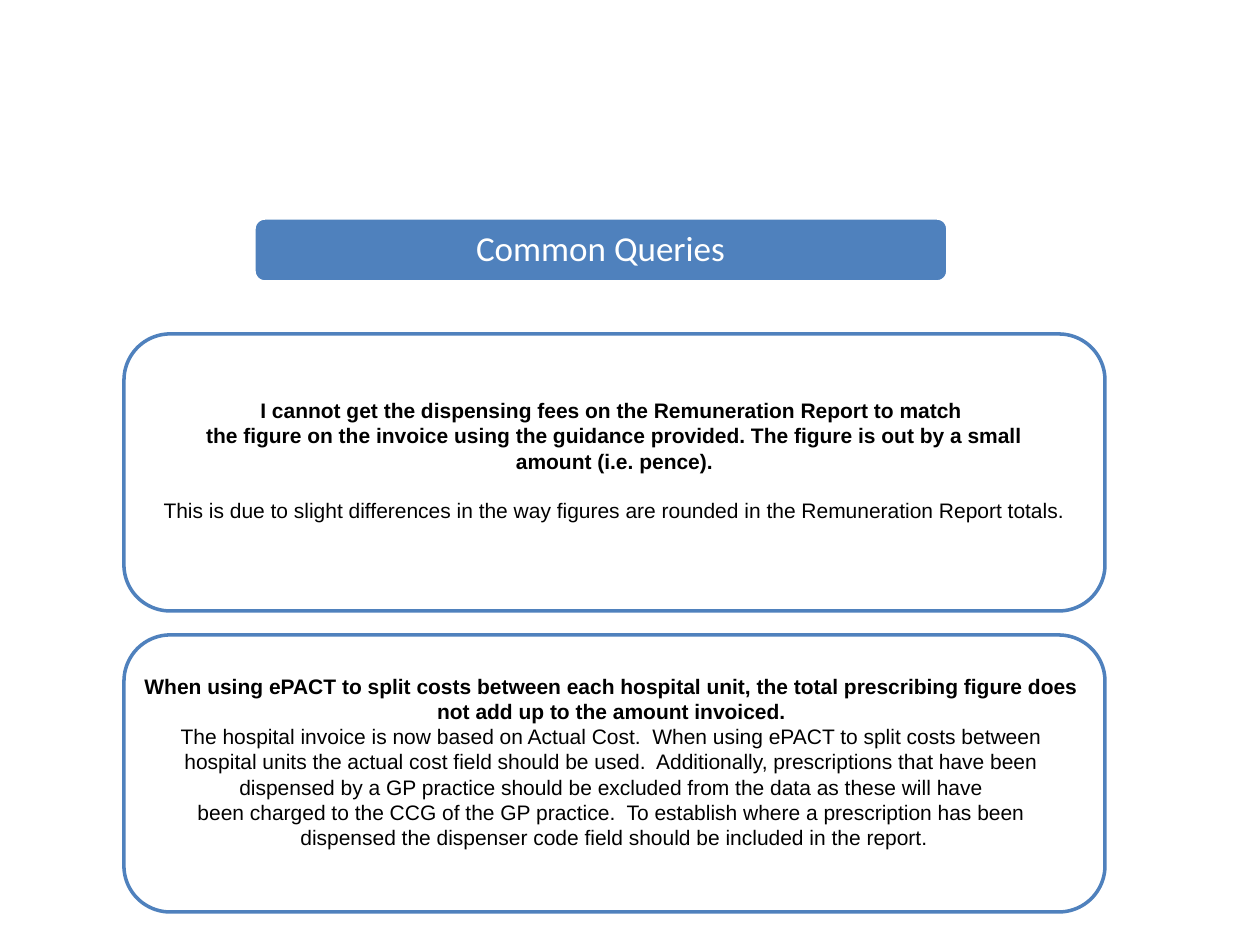
"""Build the Common Queries slide: a title bar above two question-and-answer boxes."""
from pptx import Presentation
from pptx.dml.color import RGBColor
from pptx.enum.shapes import MSO_SHAPE
from pptx.enum.text import MSO_ANCHOR, PP_ALIGN
from pptx.util import Emu, Pt

ROUNDED = MSO_SHAPE.ROUNDED_RECTANGLE
PROCESS = MSO_SHAPE.FLOWCHART_ALTERNATE_PROCESS
MIDDLE = MSO_ANCHOR.MIDDLE
CENTER = PP_ALIGN.CENTER
BLUE = RGBColor(0x4F, 0x81, 0xBD)
WHITE = RGBColor(0xFF, 0xFF, 0xFF)
BLACK = RGBColor(0x00, 0x00, 0x00)

QUERIES = [
    {
        "question": [
            "I cannot get the dispensing fees on the Remuneration Report to match ",
            "the figure on the invoice using the guidance provided. The figure is out by a small",
            "amount (i.e. pence).",
        ],
        "answer": [
            "This is due to slight differences in the way figures are rounded in the Remuneration Report totals.",
        ],
        "gap": 14,
    },
    {
        "question": [
            "When using ePACT to split costs between each hospital unit, the total prescribing figure does ",
            "not add up to the amount invoiced. ",
        ],
        "answer": [
            "The hospital invoice is now based on Actual Cost.  When using ePACT to split costs between ",
            "hospital units the actual cost field should be used.  Additionally, prescriptions that have been ",
            "dispensed by a GP practice should be excluded from the data as these will have ",
            "been charged to the CCG of the GP practice.  To establish where a prescription has been ",
            "dispensed the dispenser code field should be included in the report.",
        ],
        "gap": 0,
    },
]
BOX_TOP, BOX_STEP = 334, 301


def px(length):
    return Emu(round(length * 914400 / 126))


def add_panel(kind, left, top, width, height, fill, line):
    panel = slide.shapes.add_shape(kind, px(left), px(top), px(width), px(height))
    panel.shadow.inherit = False
    panel.fill.solid()
    panel.fill.fore_color.rgb = fill
    panel.line.color.rgb = line
    panel.line.width = Pt(2)
    return panel


prs = Presentation()
prs.slide_width, prs.slide_height = px(1260), px(945)
slide = prs.slides.add_slide(prs.slide_layouts[5])

title_bar = add_panel(ROUNDED, 254, 218, 694, 64, BLUE, WHITE)
title_bar.adjustments[0] = 0.17

title = slide.shapes.title
title.left, title.top, title.width, title.height = px(256), px(220), px(689), px(60)
title_bar._element.addnext(title._element)
title.text_frame.text = "Common Queries"
title.text_frame.vertical_anchor = MIDDLE
heading = title.text_frame.paragraphs[0]
heading.alignment = CENTER
heading.line_spacing = 0.9
heading_format = {"name": "Calibri", "size": Pt(20)}
for attribute, value in heading_format.items():
    setattr(heading.font, attribute, value)
heading.font.color.rgb = WHITE

for row, query in enumerate(QUERIES):
    box = add_panel(PROCESS, 124, BOX_TOP + row * BOX_STEP, 981, 277, WHITE, BLUE)
    frame = box.text_frame
    frame_format = {
        "word_wrap": False,
        "vertical_anchor": MIDDLE,
        "margin_top": px(6),
        "margin_bottom": px(30),
    }
    for attribute, value in frame_format.items():
        setattr(frame, attribute, value)

    question_length = len(query["question"])
    for index, wording in enumerate(query["question"] + query["answer"]):
        line = frame.add_paragraph() if index else frame.paragraphs[0]
        line.text = wording
        line.alignment = CENTER
        if index == question_length:
            line.space_before = Pt(query["gap"])
        line_format = {"name": "Arial", "size": Pt(12), "bold": index < question_length}
        for attribute, value in line_format.items():
            setattr(line.font, attribute, value)
        line.font.color.rgb = BLACK

prs.save("out.pptx")
